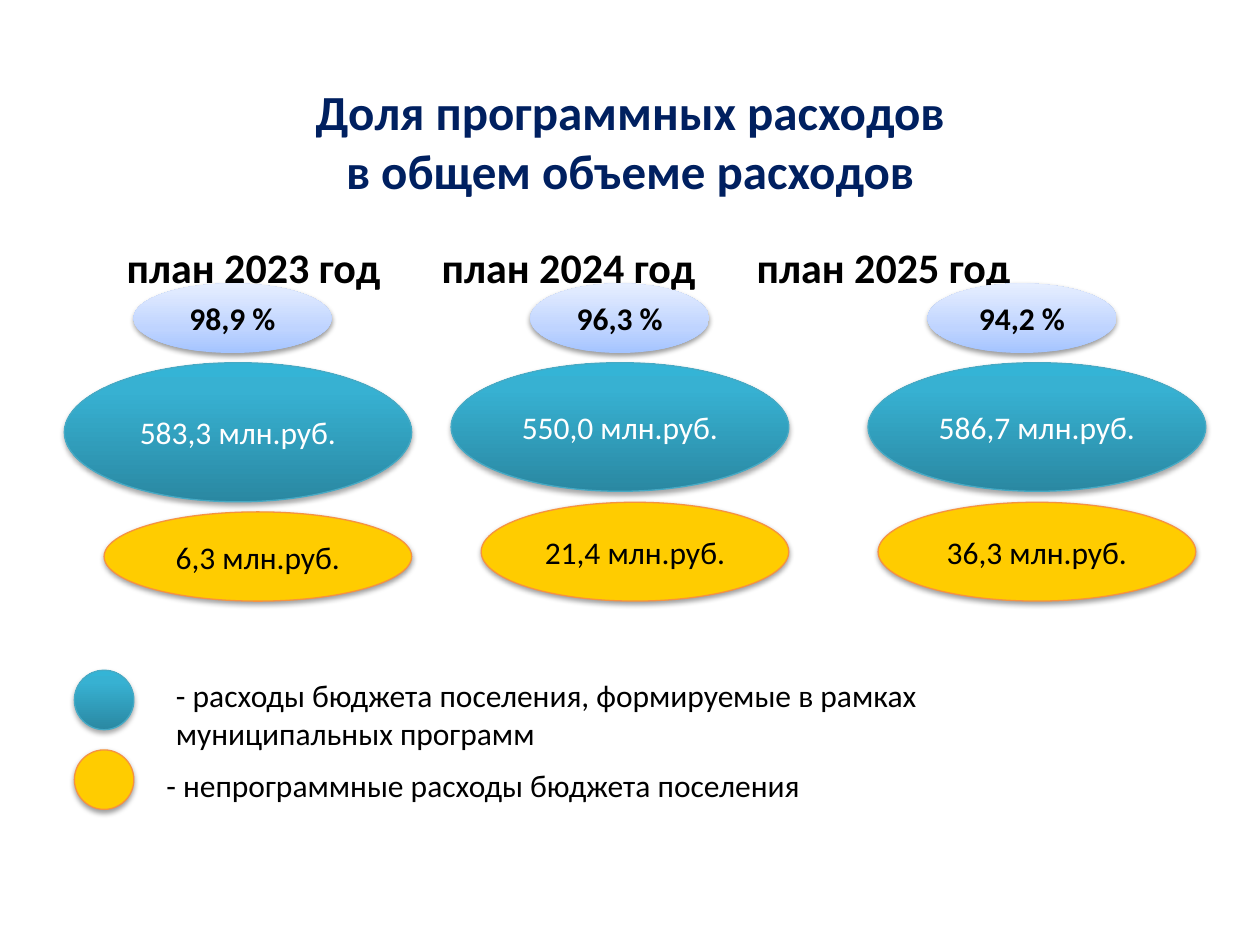
from lxml.etree import SubElement
from pptx import Presentation
from pptx.dml.color import RGBColor
from pptx.enum.shapes import MSO_SHAPE
from pptx.enum.text import MSO_ANCHOR, PP_ALIGN
from pptx.oxml.ns import qn
from pptx.util import Pt

FONT = "Calibri"
TITLE = "Доля программных расходов\vв общем объеме расходов"
YEARS = ["план 2023 год", "план 2024 год", "план 2025 год"]
YEAR_X = [72.5, 284.5, 519.5]

# Fill stops, line, shadow (opacity %, distance), text colour, bold
STYLES = {
    "share": ([(0, "A4C4FF"), (35, "BFD4FF"), (100, "E6EEFF")], None, (38, 1.6), "000000", True),
    "program": ([(0, "2A88A2"), (80, "37B1D2"), (100, "34B4D6")], "46AAC5", (35, 1.8), "FFFFFF", False),
    "other": ("FFCC00", "F69240", (38, 1.6), "000000", False),
}
# Per year: text, left, top, width, height
OVALS = {
    "program": [("583,3 млн.руб.", 36.75, 207.25, 198.5, 79.5),
                ("550,0 млн.руб.", 257.75, 207.25, 193, 73.5),
                ("586,7 млн.руб.", 496, 207.25, 193, 73.5)],
    "other": [("6,3 млн.руб.", 59.5, 292.5, 175.75, 51),
              ("21,4 млн.руб.", 275, 287, 175.75, 56.5),
              ("36,3 млн.руб.", 501.75, 287, 181.5, 56.5)],
    "share": [("98,9 %", 76.25, 162, 113.25, 39.75),
              ("96,3 %", 303, 162, 102.25, 39.75),
              ("94,2 %", 530, 162, 108, 39.75)],
}
# Style, dot top, text lines, text left, top, width, height
LEGEND = [
    ("program", 383, ["- расходы бюджета поселения, формируемые в рамках",
                      "муниципальных программ"], 93.5, 383, 584, 51),
    ("other", 428.5, ["- непрограммные расходы бюджета поселения"], 88, 434, 578, 29),
]
DOT_X, DOT = 42.5, 34


def color(code):
    return RGBColor.from_string(code)


def write(frame, lines, size, code="000000", bold=False, align=PP_ALIGN.LEFT):
    frame.word_wrap = True
    frame.text = "\n".join(lines)
    for para in frame.paragraphs:
        para.alignment = align
        font = para.font
        font.name, font.size, font.bold = FONT, Pt(size), bold
        font.color.rgb = color(code)


def shade(shape, stops):
    """Fill with a gradient that runs from bottom to top."""
    shape.fill.gradient()
    shape.fill.gradient_angle = 90
    group = shape.element.spPr.find(".//" + qn("a:gsLst"))
    group.clear()
    for pos, code in stops:
        stop = SubElement(group, qn("a:gs"), pos=str(pos * 1000))
        SubElement(stop, qn("a:srgbClr"), val=code)


def drop(shape, alpha, dist):
    """Cast a soft shadow straight down."""
    shape.shadow.inherit = False
    effects = shape.element.spPr.find(qn("a:effectLst"))
    outer = SubElement(effects, qn("a:outerShdw"), blurRad=str(Pt(3.1)), dist=str(Pt(dist)),
                       dir="5400000", rotWithShape="0")
    tint = SubElement(outer, qn("a:srgbClr"), val="000000")
    SubElement(tint, qn("a:alpha"), val=str(alpha * 1000))


def oval(slide, style, text, *box):
    fill, line, shadow, ink, bold = STYLES[style]
    shape = slide.shapes.add_shape(MSO_SHAPE.OVAL, *map(Pt, box))
    if isinstance(fill, list):
        shade(shape, fill)
    else:
        shape.fill.solid()
        shape.fill.fore_color.rgb = color(fill)
    if line:
        shape.line.color.rgb = color(line)
        shape.line.width = Pt(0.75)
    else:
        shape.line.fill.background()
    drop(shape, *shadow)
    if text:
        shape.text_frame.vertical_anchor = MSO_ANCHOR.MIDDLE
        write(shape.text_frame, [text], 18, ink, bold, PP_ALIGN.CENTER)


def label(slide, lines, size, box, bold=False):
    shape = slide.shapes.add_textbox(*map(Pt, box))
    write(shape.text_frame, lines, size, bold=bold)
    return shape.text_frame


def header(slide):
    """Set the years on one line, each at its own tab stop."""
    left, inset = 36, 7.2
    frame = label(slide, [""], 24, (left, 134.5, 648, 37), True)
    para = frame.paragraphs[0]
    props = para._p.get_or_add_pPr()
    start, *rest = [Pt(x - left - inset) for x in YEAR_X]
    props.set("marL", str(start))
    props.set("indent", "0")
    tabs = props.makeelement(qn("a:tabLst"), {})
    props.insert(0, tabs)
    for pos in rest:
        SubElement(tabs, qn("a:tab"), pos=str(pos), algn="l")
    para.text = "\t".join(YEARS)


def main():
    deck = Presentation()
    deck.slide_width, deck.slide_height = Pt(720), Pt(540)
    slide = deck.slides.add_slide(deck.slide_layouts[5])

    title = slide.shapes.title
    title.left, title.top, title.width, title.height = map(Pt, (36, 49, 648, 62.5))
    title.text_frame.vertical_anchor = MSO_ANCHOR.MIDDLE
    write(title.text_frame, [TITLE], 28, "002060", True, PP_ALIGN.CENTER)

    header(slide)
    for style, row in OVALS.items():
        for item in row:
            oval(slide, style, *item)
    for style, top, lines, *box in LEGEND:
        oval(slide, style, "", DOT_X, top, DOT, DOT)
        label(slide, lines, 18, box)
    deck.save("out.pptx")


if __name__ == "__main__":
    main()
